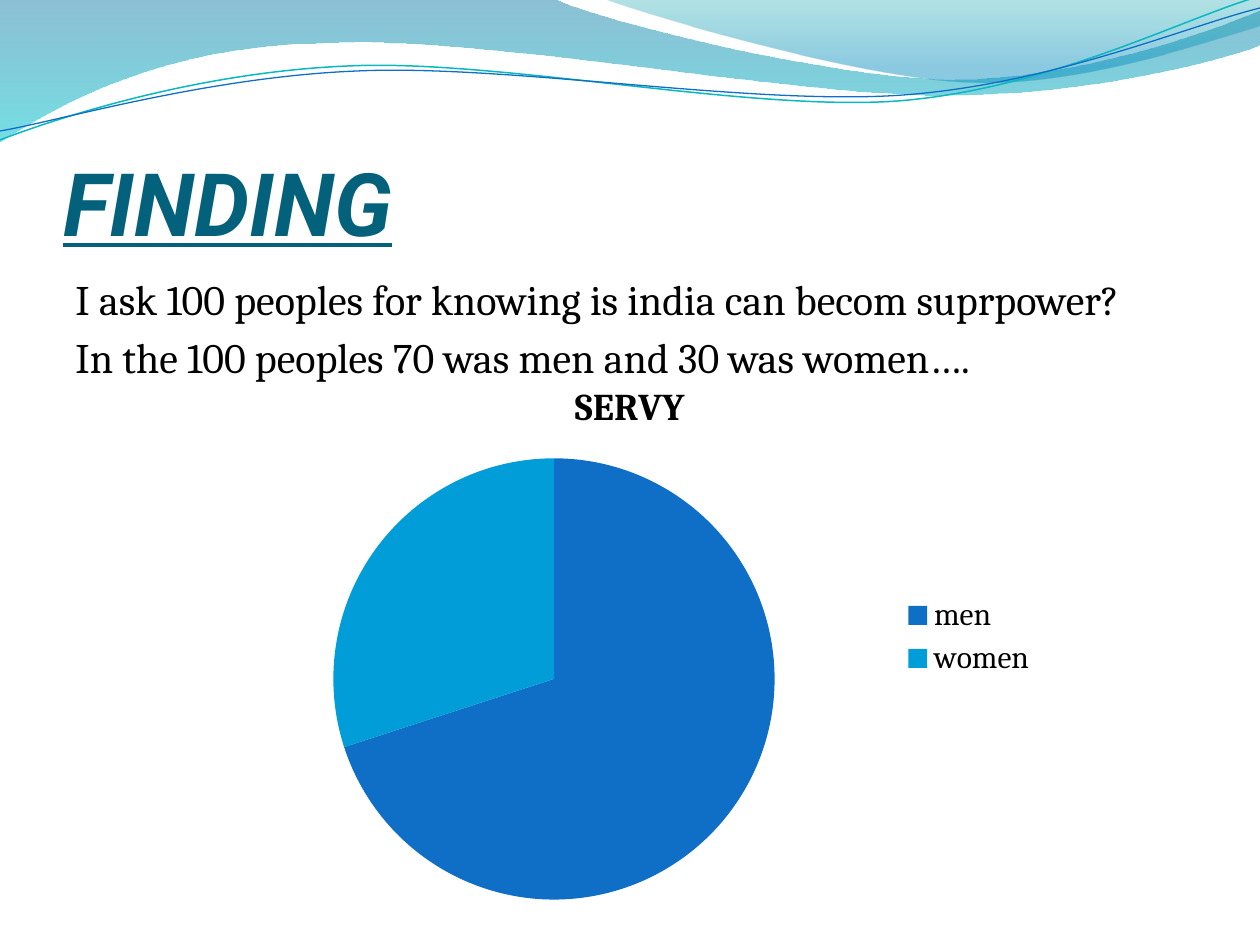
"""Build the survey finding slide with its wave header and pie chart."""
from math import cos, radians, sin

from lxml.etree import SubElement
from pptx import Presentation
from pptx.chart.data import CategoryChartData
from pptx.dml.color import RGBColor
from pptx.enum.chart import XL_CHART_TYPE, XL_LEGEND_POSITION
from pptx.enum.text import MSO_ANCHOR, PP_ALIGN
from pptx.oxml.ns import qn
from pptx.util import Pt

PX = 914400 / 126
TILT = 2.7
PIVOT = (629, 72)

BLACK = RGBColor(0x00, 0x00, 0x00)
TITLE_TEAL = RGBColor(0x04, 0x61, 0x7B)
DEEP_BLUE = RGBColor(0x00, 0x74, 0xA1)
AQUA = RGBColor(0x00, 0xC6, 0xCF)
SEA_GREEN = RGBColor(0x00, 0xA1, 0xA9)
SKY = RGBColor(0x00, 0x8B, 0xBF)
LINE_TEAL = RGBColor(0x0A, 0xB8, 0xBF)
BLUE = RGBColor(0x0F, 0x6F, 0xC6)
CYAN = RGBColor(0x00, 0x9D, 0xD9)

BROAD_WAVE = [
    [(0, 0)], [(554, -1)],
    [(600, 21), (837, 79), (955, 79)], [(1075, 79), (1207, 33), (1260, 11)],
    [(1261, 45)],
    [(1239, 55), (1096, 96), (940, 95)], [(783, 95), (481, 35), (324, 43)],
    [(163, 45), (58, 105), (-1, 142)], [(0, 0)],
]
CORNER_WAVE = [
    [(604, -1)],
    [(641, 14), (859, 78), (969, 82)], [(1079, 87), (1211, 40), (1260, 26)],
    [(1260, 0)], [(604, -1)],
]
TEAL_LINE = [
    [(0, 140)],
    [(60, 117), (199, 72), (349, 66)], [(498, 59), (747, 112), (898, 101)],
    [(1049, 89), (1182, 19), (1257, -3)],
]
BLUE_LINE = [
    [(0, 131)],
    [(59, 121), (207, 77), (357, 71)], [(508, 64), (752, 106), (903, 95)],
    [(1053, 84), (1187, 26), (1260, 8)],
]
SENTENCES = [
    "I ask 100 peoples for knowing is india can becom suprpower?",
    "In the 100 peoples 70 was men and 30 was women….",
]


def px(n):
    """Turn pixels into EMU."""
    return round(n * PX)


def turn(point):
    """Turn a point clockwise by the tilt about the pivot."""
    a = radians(TILT)
    x, y = point[0] - PIVOT[0], point[1] - PIVOT[1]
    return PIVOT[0] + x * cos(a) - y * sin(a), PIVOT[1] + x * sin(a) + y * cos(a)


def add_outline(s, segments, close):
    """Add a freeform of straight and cubic segments without shadow."""
    segments = [[(px(x), px(y)) for x, y in seg] for seg in segments]
    ends = [seg[-1] for seg in segments]
    builder = s.shapes.build_freeform(*ends[0], scale=1.0)
    builder.add_line_segments(ends[1:], close=close)
    sp = builder.convert_to_shape()
    sp.shadow.inherit = False
    lines = list(sp._element.iter(qn("a:lnTo")))
    for line, seg in zip(lines, segments[1:]):
        if len(seg) == 3:
            line.tag = qn("a:cubicBezTo")
            line.clear()
            for x, y in seg:
                SubElement(line, qn("a:pt"), x=str(x - sp.left), y=str(y - sp.top))
    return sp


def add_wave(s, segments, stops):
    """Add a wave with a translucent gradient from top to bottom."""
    sp = add_outline(s, segments, True)
    sp.line.fill.background()
    sp.fill.gradient()
    sp.fill.gradient_angle = 270
    nodes = sp._element.iter(qn("a:gs"))
    for stop, gs, (position, color, opacity) in zip(sp.fill.gradient_stops, nodes, stops):
        stop.position = position
        stop.color.rgb = color
        SubElement(gs[0], qn("a:alpha"), val=str(opacity * 1000))


def add_curve(s, segments, color, width):
    """Add an open curved line in a tilted frame."""
    sp = add_outline(s, [[turn(point) for point in seg] for seg in segments], False)
    sp.rotation = 360 - TILT
    sp.fill.background()
    sp.line.color.rgb = color
    sp.line.width = Pt(width)


def set_font(font, name, size, color):
    """Set the typeface, size and colour of a font."""
    font.name, font.size = name, Pt(size)
    font.color.rgb = color


def set_title(s, text):
    """Place and format the title placeholder."""
    sp = s.shapes.title
    sp.left, sp.top, sp.width, sp.height = map(px, (63, 96, 1134, 158))
    tf = sp.text_frame
    tf.text = text
    tf.vertical_anchor = MSO_ANCHOR.BOTTOM
    tf.margin_left = tf.margin_right = tf.margin_bottom = 0
    p = tf.paragraphs[0]
    p.alignment = PP_ALIGN.LEFT
    set_font(p.font, "Roboto", 50, TITLE_TEAL)
    p.font.bold = p.font.italic = p.font.underline = True


def add_body(s, sentences):
    """Add the sentences as hanging paragraphs."""
    tf = s.shapes.add_textbox(*map(px, (63, 267, 1134, 605))).text_frame
    tf.word_wrap = True
    tf.text = "\n".join(sentences)
    for p in tf.paragraphs:
        set_font(p.font, "Cambria", 24, BLACK)
        p.space_before = Pt(5)
        pPr = p._p.get_or_add_pPr()
        pPr.set("marL", str(px(38)))
        pPr.set("indent", str(px(-38)))
        gap = pPr.find(qn("a:spcBef"))
        gap.clear()
        SubElement(gap, qn("a:spcPct"), val="20000")


def add_pie(s, name, values, colors):
    """Add the pie chart with its title and legend."""
    data = CategoryChartData()
    data.categories = list(values)
    data.add_series(name, list(values.values()))
    box = map(px, (210, 357, 840, 560))
    chart = s.shapes.add_chart(XL_CHART_TYPE.PIE, *box, data).chart
    set_font(chart.font, "Cambria", 18, BLACK)
    chart.has_title = True
    tf = chart.chart_title.text_frame
    tf.text = name
    p = tf.paragraphs[0]
    set_font(p.font, "Cambria", 21.6, BLACK)
    p.font.bold = True
    chart.has_legend = True
    chart.legend.position = XL_LEGEND_POSITION.RIGHT
    chart.legend.include_in_layout = False
    plot = chart.plots[0]
    plot.vary_by_categories = True
    for i, color in enumerate(colors):
        fill = plot.series[0].points[i].format.fill
        fill.solid()
        fill.fore_color.rgb = color


def main():
    """Build and save the slide."""
    prs = Presentation()
    prs.slide_width, prs.slide_height = px(1260), px(945)
    s = prs.slides.add_slide(prs.slide_layouts[5])
    add_wave(s, BROAD_WAVE, [(0, DEEP_BLUE, 45), (1, AQUA, 55)])
    add_wave(s, CORNER_WAVE, [(0, SEA_GREEN, 30), (0.8, SKY, 45)])
    add_curve(s, TEAL_LINE, LINE_TEAL, 0.85)
    add_curve(s, BLUE_LINE, BLUE, 0.75)
    set_title(s, "FINDING")
    add_body(s, SENTENCES)
    add_pie(s, "SERVY", {"men": 70, "women": 30}, [BLUE, CYAN])
    prs.save("out.pptx")


if __name__ == "__main__":
    main()
